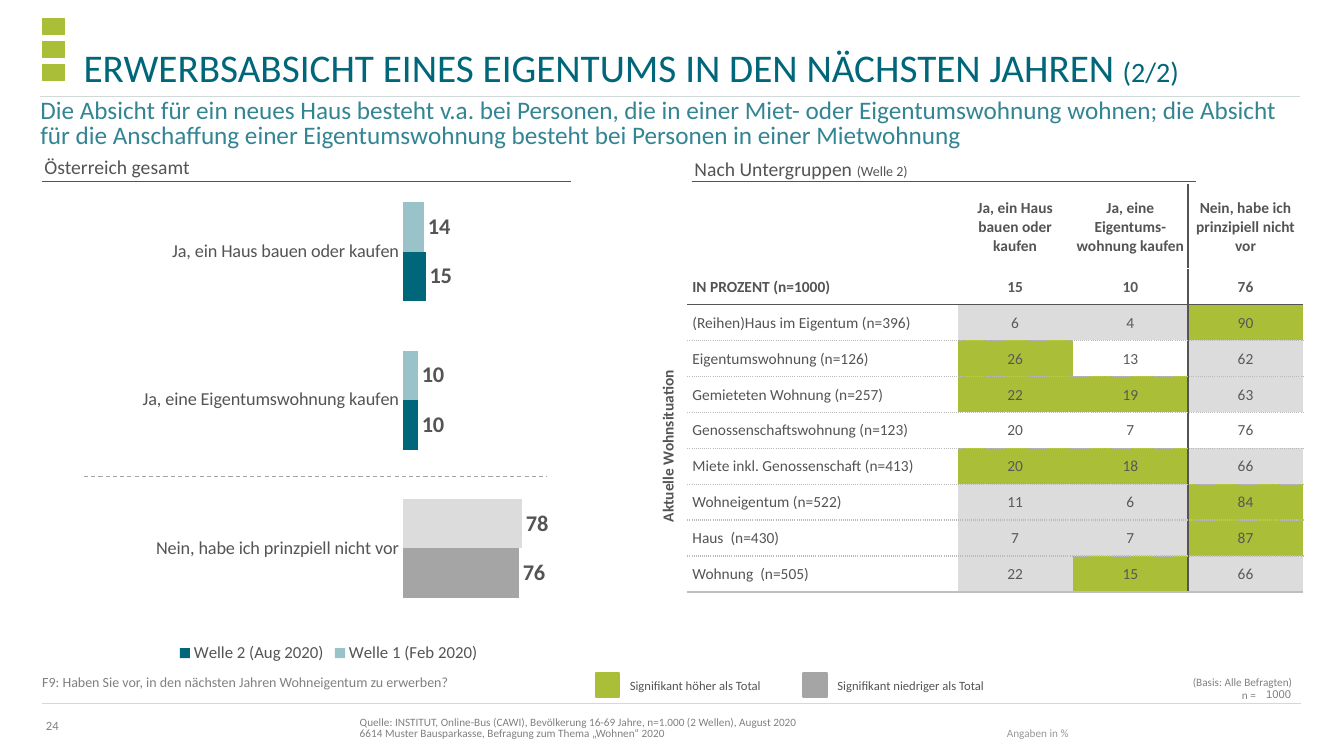
import pptx
import pptx.util
import pptx.chart.data
import pptx.dml.color
import pptx.enum.chart
import pptx.enum.dml
import pptx.enum.shapes
import pptx.enum.text
import pptx.oxml
import pptx.oxml.ns

Pt = pptx.util.Pt
RGB = pptx.dml.color.RGBColor.from_string
Align = pptx.enum.text.PP_ALIGN
Anchor = pptx.enum.text.MSO_ANCHOR
Rect = pptx.enum.shapes.MSO_SHAPE.RECTANGLE
Place = pptx.enum.chart
nsdecls = pptx.oxml.ns.nsdecls
colors = {
    "lime": "ABBE37", "petrol": "006679", "teal": "338594", "mist": "99C2C9",
    "dark": "545454", "ink": "595959", "mid": "808080", "soft": "989898",
    "gray": "A5A5A5", "pale": "DCDCDC", "rule": "D1DAD9", "dots": "BBBBBB",
    "base": "BFBFBF", "white": "FFFFFF",
}


def style(font, size, color, bold=False):
    look = {"name": "Calibri", "size": Pt(size), "bold": bold}
    for key, value in look.items():
        setattr(font, key, value)
    font.color.rgb = RGB(colors[color])


def write(frame, text, size, color, bold=False, align=Align.LEFT, inset=(0, 3.6, 0, 3.6)):
    sides = ("margin_left", "margin_top", "margin_right", "margin_bottom")
    for side, gap in zip(sides, inset):
        setattr(frame, side, Pt(gap))
    para = frame.paragraphs[0]
    para.text = text
    para.alignment = align
    for run in para.runs:
        style(run.font, size, color, bold)
    return para


deck = pptx.Presentation()
deck.slide_width, deck.slide_height = Pt(960), Pt(540)
slide = deck.slides.add_slide(deck.slide_layouts[6])
shapes = slide.shapes

rules = [
    (30.2, 929.5, 502.6, "rule"), (60, 391, 340.6, "gray"), (28.8, 928.8, 68.6, "rule"),
    (30.2, 408.2, 129.6, "dark"), (494, 854, 129.6, "dark"),
]
for left, right, y, color in rules:
    rule = shapes.add_connector(
        pptx.enum.shapes.MSO_CONNECTOR.STRAIGHT, Pt(left), Pt(y), Pt(right), Pt(y))
    rule.line.color.rgb = RGB(colors[color])
    rule.line.width = Pt(0.75)
    if color == "gray":
        rule.line.dash_style = pptx.enum.dml.MSO_LINE.DASH
    rule._element.spPr.append(pptx.oxml.parse_xml(f"<a:effectLst {nsdecls('a')}/>"))

marks = [(30.2, 13 + 16.6 * row, 16, 11.5, "lime", 0.5) for row in range(3)]
marks += [(425.5, 481, 17, 17, "lime", 1.5), (574, 481, 17, 17, "gray", 1.5)]
for x, y, w, h, color, width in marks:
    mark = shapes.add_shape(Rect, Pt(x), Pt(y), Pt(w), Pt(h))
    mark.shadow.inherit = False
    mark.fill.solid()
    mark.fill.fore_color.rgb = mark.line.color.rgb = RGB(colors[color])
    mark.line.width = Pt(width)

chartdata = pptx.chart.data.CategoryChartData()
chartdata.categories = [
    "Ja, ein Haus bauen oder kaufen",
    "Ja, eine Eigentumswohnung kaufen",
    "Nein, habe ich prinzpiell nicht vor",
]
chartdata.add_series("Welle 1 (Feb 2020)", (14, 10, 78))
chartdata.add_series("Welle 2 (Aug 2020)", (15, 10, 76))
chart = shapes.add_chart(
    Place.XL_CHART_TYPE.BAR_CLUSTERED, Pt(-19.4), Pt(108), Pt(508.3), Pt(368.6), chartdata).chart
style(chart.font, 10, "dark")
chart.has_title = False
chart.has_legend = True
chart.legend.position = Place.XL_LEGEND_POSITION.BOTTOM
chart.legend.include_in_layout = False
style(chart.legend.font, 12, "dark")
names = chart.category_axis
names.reverse_order = True
names.major_tick_mark = Place.XL_TICK_MARK.NONE
names.format.line.fill.background()
style(names.tick_labels.font, 13, "dark")
scale = chart.value_axis
limits = {"minimum_scale": 0, "maximum_scale": 160, "major_unit": 20,
          "has_major_gridlines": False, "visible": False}
for key, value in limits.items():
    setattr(scale, key, value)
plot = chart.plots[0]
plot.gap_width, plot.overlap, plot.vary_by_categories = 100, 0, False
for series, main, last in zip(plot.series, ("mist", "petrol"), ("pale", "gray")):
    for fill, color in ((series.format.fill, main), (series.points[2].format.fill, last)):
        fill.solid()
        fill.fore_color.rgb = RGB(colors[color])
    labels = series.data_labels
    labels.show_value = True
    labels.position = Place.XL_LABEL_POSITION.OUTSIDE_END
    style(labels.font, 16, "dark", True)
area = chart._chartSpace.chart.plotArea
for old in area.findall(pptx.oxml.ns.qn("c:layout")):
    area.remove(old)
spots = "".join(f'<c:{key}Mode val="edge"/>' for key in "xy")
spots += "".join(f'<c:{key} val="{value}"/>' for key, value in
                 zip("xywh", (0.604, 0.051, 0.344, 0.863)))
area.insert(0, pptx.oxml.parse_xml(
    f'<c:layout {nsdecls("c")}><c:manualLayout><c:layoutTarget val="inner"/>'
    f'{spots}</c:manualLayout></c:layout>'))

rows = [
    ("", "Ja, ein Haus bauen oder kaufen", "Ja, eine Eigentums-wohnung kaufen",
     "Nein, habe ich prinzipiell nicht vor", "   "),
    ("IN PROZENT (n=1000)", "15", "10", "76", "   "),
    ("(Reihen)Haus im Eigentum (n=396)", "6", "4", "90", "--+"),
    ("Eigentumswohnung (n=126)", "26", "13", "62", "+ -"),
    ("Gemieteten Wohnung (n=257)", "22", "19", "63", "++-"),
    ("Genossenschaftswohnung (n=123)", "20", "7", "76", "   "),
    ("Miete inkl. Genossenschaft (n=413)", "20", "18", "66", "++-"),
    ("Wohneigentum (n=522)", "11", "6", "84", "--+"),
    ("Haus  (n=430)", "7", "7", "87", "--+"),
    ("Wohnung  (n=505)", "22", "15", "66", "-+-"),
]
plain = "{2D5ABB26-0587-4C30-8999-92F81FD0307C}"
grid = shapes.add_table(len(rows), 4, Pt(491), Pt(131.8), Pt(440), Pt(291.2)).table
base = shapes.add_table(1, 1, Pt(838.8), Pt(488.2), Pt(92.9), Pt(16.6)).table
for table in (grid, base):
    table.first_row = table.horz_banding = False
    table._tbl.tblPr.find(pptx.oxml.ns.qn("a:tableStyleId")).text = plain
for col, width in enumerate((193, 82.3, 82.3, 82.3)):
    grid.columns[col].width = Pt(width)
white, dark = ("white", 0.25, "solid"), ("dark", 1, "solid")
dots, end = ("dots", 1, "sysDot"), ("base", 1, "solid")
edges = [white, white, dark] + [dots] * 7 + [end]
for r, row in enumerate(rows):
    grid.rows[r].height = Pt(25.7 if r else 59.9)
    for c, text in enumerate(row[:4]):
        cell = grid.cell(r, c)
        cell.vertical_anchor = Anchor.MIDDLE
        write(cell.text_frame, text, 11, "ink" if r and c else "dark", r < 2,
              Align.CENTER if c else Align.LEFT)
        cell.margin_left = Pt(0.7 if c else 3.6)
        cell.margin_right = cell.margin_top = Pt(0.7)
        cell.margin_bottom = 0
        borders = {"L": dark if c == 3 else None, "R": dark if c == 2 else None,
                   "T": edges[r], "B": edges[r + 1]}
        for side, edge in borders.items():
            if edge:
                color, width, dash = edge
                cell._tc.get_or_add_tcPr().append(pptx.oxml.parse_xml(
                    f'<a:ln{side} {nsdecls("a")} w="{Pt(width)}"><a:solidFill>'
                    f'<a:srgbClr val="{colors[color]}"/></a:solidFill>'
                    f'<a:prstDash val="{dash}"/></a:ln{side}>'))
        sign = row[4][c - 1] if c else " "
        if sign == " ":
            cell.fill.background()
        else:
            cell.fill.solid()
            cell.fill.fore_color.rgb = RGB(colors["lime" if sign == "+" else "pale"])
count = base.cell(0, 0)
write(count.text_frame, "1000", 8, "mid", align=Align.RIGHT)
count.text_frame.paragraphs[0].runs[0].font.name = "Arial"
count.margin_left = count.margin_right = Pt(9.4)
count.margin_top = count.margin_bottom = Pt(3.6)
count.fill.background()

top, middle, bottom = Anchor.TOP, Anchor.MIDDLE, Anchor.BOTTOM
left, right, center = Align.LEFT, Align.RIGHT, Align.CENTER
slim, foot, wide = (0, 3.6, 0, 3.6), (15.8, 3.6, 7.2, 3.6), (7.2, 3.6, 7.2, 3.6)
boxes = [
    (241.2, 508.3, 631.4, 23.8, bottom, foot, left, 0.85,
     "Quelle: INSTITUT, Online-Bus (CAWI), Bevölkerung 16-69 Jahre, n=1.000 (2 Wellen), August 2020\n"
     "6614 Muster Bausparkasse, Befragung zum Thema „Wohnen“ 2020", 8, "mid", None),
    (703.4, 516.2, 72.7, 15.8, bottom, foot, left, 0.85, "Angaben in %", 8, "soft", None),
    (28.8, 512.6, 17.3, 10.8, middle, (0, 0, 0, 0), center, 1, "24", 9, "mid", None),
    (52.6, 26.6, 877, 38.2, bottom, (7.2, 0, 7.2, 0), left, Pt(28),
     "ERWERBSABSICHT EINES EIGENTUMS IN DEN NÄCHSTEN JAHREN ", 28, "petrol", ("(2/2)", 20)),
    (28.8, 70.6, 900.7, 23, top, (0, 0, 7.2, 3.6), left, Pt(18),
     "Die Absicht für ein neues Haus besteht v.a. bei Personen, die in einer Miet- oder "
     "Eigentumswohnung wohnen; die Absicht für die Anschaffung einer Eigentumswohnung besteht "
     "bei Personen in einer Mietwohnung", 18, "teal", None),
    (31.7, 107.3, 376.6, 24.5, top, slim, left, 1, "Österreich gesamt", 14, "dark", None),
    (496.1, 113, 451.4, 20.2, top, slim, left, 0.7, "Nach Untergruppen ", 14, "dark", ("(Welle 2)", 10)),
    (635.8, 474.5, 287.3, 25.9, middle, slim, right, 1, "(Basis: Alle Befragten)", 8, "mid", None),
    (30.2, 474.5, 604.8, 25.9, middle, slim, left, 1,
     "F9: Haben Sie vor, in den nächsten Jahren Wohneigentum zu erwerben?", 10, "mid", None),
    (816.5, 488.2, 80.6, 17.3, top, slim, right, 1, "n =", 8, "mid", None),
    (414.7, 307.4, 124.6, 20.9, top, wide, left, 1, "Aktuelle Wohnsituation", 11, "dark", None),
    (442.8, 478.1, 119.5, 23.8, middle, wide, left, 1, "Signifikant höher als Total", 9, "dark", None),
    (591.1, 477.4, 130.3, 23.8, middle, wide, left, 1, "Signifikant niedriger als Total", 9, "dark", None),
]
for x, y, w, h, anchor, inset, align, space, text, size, color, tail in boxes:
    box = shapes.add_textbox(Pt(x), Pt(y), Pt(w), Pt(h))
    frame = box.text_frame
    turned = text.startswith("Aktuelle")
    frame.word_wrap = not turned
    frame.vertical_anchor = anchor
    para = write(frame, text, size, color, turned, align, inset)
    para.line_spacing = space
    if turned:
        box.rotation = 270
    if tail:
        run = para.add_run()
        run.text = tail[0]
        style(run.font, tail[1], color)

deck.save("out.pptx")
